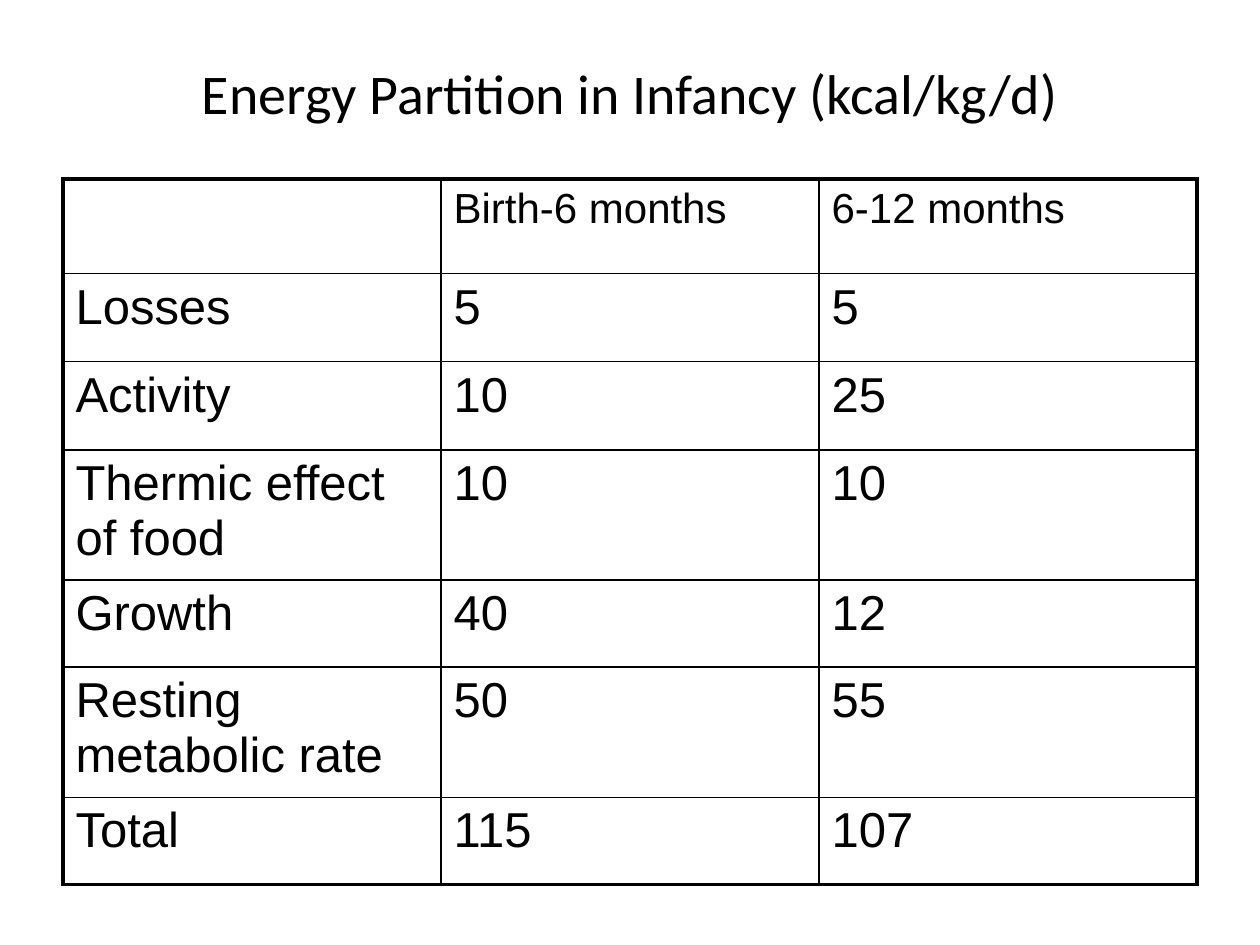
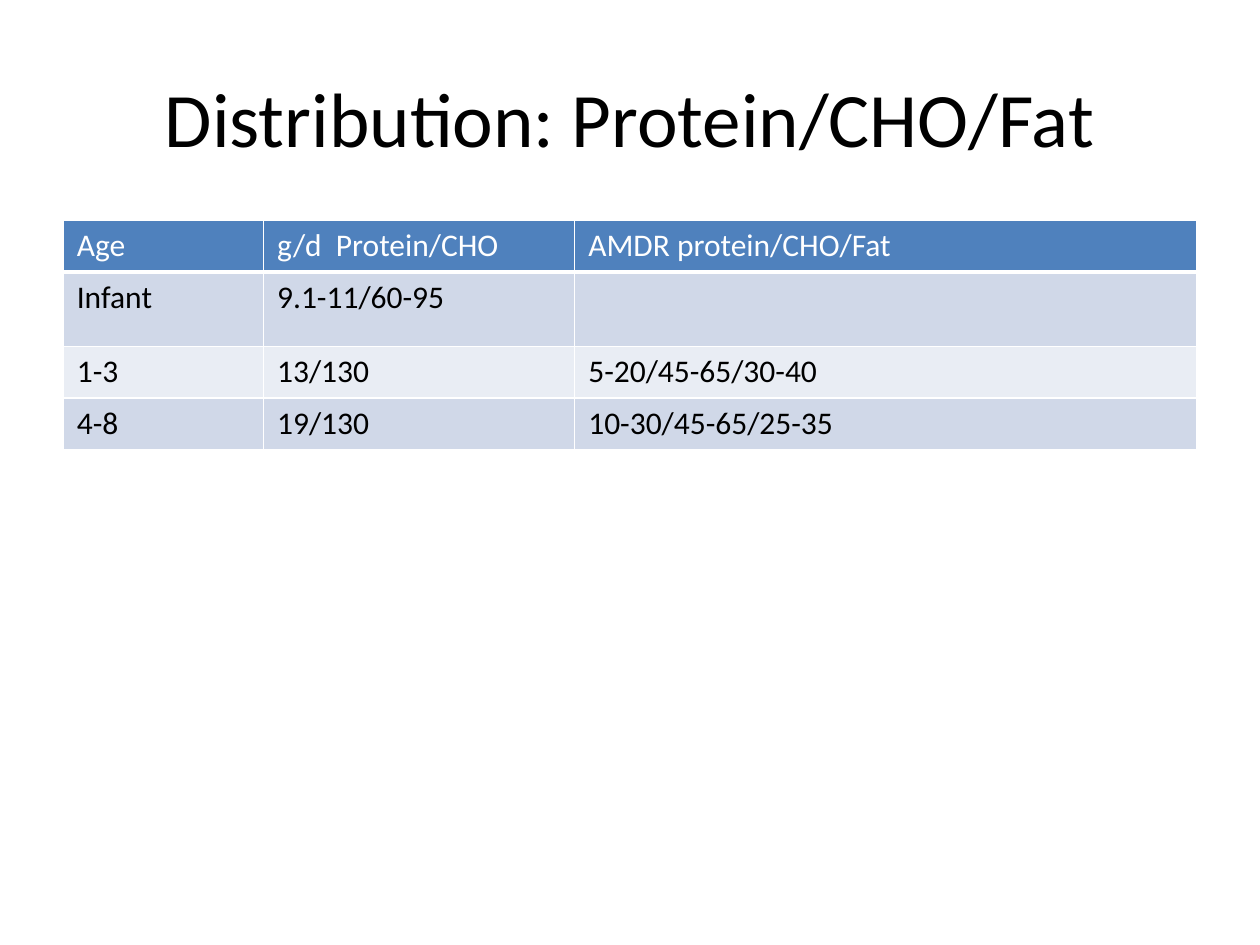
import pptx
import pptx.util
import pptx.dml.color
import pptx.enum.text
import pptx.oxml.ns
import lxml.etree

COLOURS = {"ink": "000000", "paper": "FFFFFF", "header": "4F81BD",
           "band_dark": "D0D8E8", "band_light": "E9EDF4"}
WIDTH, HEIGHT = 10, 7.5
MARGIN = 0.05 * WIDTH
CONTENT = WIDTH - 2 * MARGIN
TITLE_TOP = 0.04 * HEIGHT
Inches = pptx.util.Inches


def write(frame, text, size=18, font="Calibri", colour="ink", align="LEFT"):
    paragraph = frame.paragraphs[0]
    paragraph.alignment = getattr(pptx.enum.text.PP_ALIGN, align)
    run = paragraph.add_run()
    run.text = text
    run.font.size = pptx.util.Pt(size)
    run.font.name = font
    run.font.color.rgb = pptx.dml.color.RGBColor.from_string(COLOURS[colour])


def draw_borders(cell, colour, widths):
    """Draw the left, right, top and bottom edges, with widths in points."""
    properties = cell._tc.get_or_add_tcPr()
    for side, width in zip("LRTB", widths):
        edge = lxml.etree.SubElement(properties, pptx.oxml.ns.qn(f"a:ln{side}"),
                                     w=str(pptx.util.Pt(width)))
        fill = lxml.etree.SubElement(edge, pptx.oxml.ns.qn("a:solidFill"))
        lxml.etree.SubElement(fill, pptx.oxml.ns.qn("a:srgbClr"), val=COLOURS[colour])


# Content of the slides
energy = {
    "title": "Energy Partition in Infancy (kcal/kg/d)",
    "title_size": 32, "title_height": 0.87, "top": 1.42,
    "columns": [CONTENT / 3] * 3,
    "heights": [0.75, 0.7, 0.7, 0.82, 0.69, 0.82, 0.69],
    "font": "Arial", "header_size": 24, "body_size": 28,
    "header_colour": "ink", "inset": 0.1,
    "border": "ink", "outer": 2.25, "header_rule": 1,
    "fills": None,
    "rows": [
        ["", "Birth-6 months", "6-12 months"],
        ["Losses", "5", "5"],
        ["Activity", "10", "25"],
        ["Thermic effect of food", "10", "10"],
        ["Growth", "40", "12"],
        ["Resting metabolic rate", "50", "55"],
        ["Total", "115", "107"],
    ],
}
distribution = {
    "title": "Distribution: Protein/CHO/Fat",
    "title_size": 44, "title_height": 1.25, "top": 1.75,
    "columns": [1.59, 2.47, 4.94],
    "heights": [0.41, 0.59, 0.41, 0.41],
    "font": "Calibri", "header_size": 18, "body_size": 18,
    "header_colour": "paper", "inset": 0.11,
    "border": "paper", "outer": 1, "header_rule": 3,
    "fills": ["header", "band_dark", "band_light", "band_dark"],
    "rows": [
        ["Age", "g/d  Protein/CHO", "AMDR protein/CHO/Fat"],
        ["Infant", "9.1-11/60-95", ""],
        ["1-3", "13/130", "5-20/45-65/30-40"],
        ["4-8", "19/130", "10-30/45-65/25-35"],
    ],
}

deck = pptx.Presentation()
deck.slide_width, deck.slide_height = Inches(WIDTH), Inches(HEIGHT)

for topic in (energy, distribution):
    slide = deck.slides.add_slide(deck.slide_layouts[6])

    # Title
    heading = slide.shapes.add_textbox(Inches(MARGIN), Inches(TITLE_TOP), Inches(CONTENT),
                                       Inches(topic["title_height"])).text_frame
    heading.word_wrap = True
    heading.vertical_anchor = pptx.enum.text.MSO_ANCHOR.MIDDLE
    write(heading, topic["title"], size=topic["title_size"], align="CENTER")

    # Table grid
    rows, columns, heights = topic["rows"], topic["columns"], topic["heights"]
    grid = slide.shapes.add_table(len(rows), len(columns), Inches(MARGIN), Inches(topic["top"]),
                                  Inches(CONTENT), Inches(sum(heights))).table
    grid.first_row = grid.horz_banding = False
    for column, width in zip(grid.columns, columns):
        column.width = Inches(width)
    for row, height in zip(grid.rows, heights):
        row.height = Inches(height)

    # Cells: heavier outer frame, header row, then body
    last_row, last_column = len(rows) - 1, len(columns) - 1
    for r, values in enumerate(rows):
        for c, value in enumerate(values):
            cell = grid.cell(r, c)
            cell.margin_left = cell.margin_right = Inches(topic["inset"])
            outer = topic["outer"]
            bottom = topic["header_rule"] if r == 0 else outer if r == last_row else 1
            draw_borders(cell, topic["border"], [outer if c == 0 else 1,
                                                 outer if c == last_column else 1,
                                                 outer if r == 0 else 1, bottom])
            if topic["fills"]:
                cell.fill.solid()
                cell.fill.fore_color.rgb = pptx.dml.color.RGBColor.from_string(
                    COLOURS[topic["fills"][r]])
            else:
                cell.fill.background()
            if value:
                write(cell.text_frame, value, font=topic["font"],
                      size=topic["body_size"] if r else topic["header_size"],
                      colour="ink" if r else topic["header_colour"])

deck.save("out.pptx")
